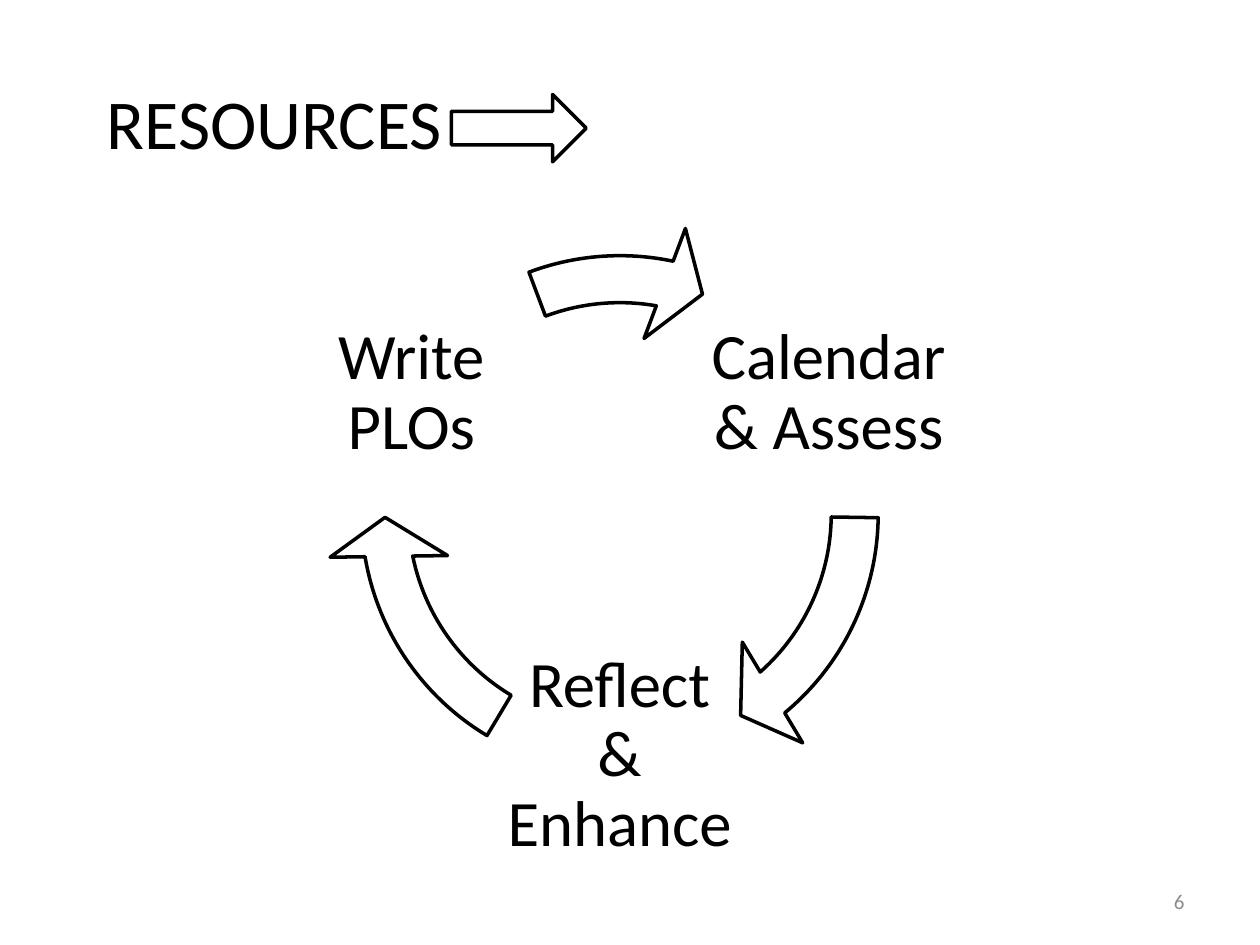
from pptx import Presentation
from pptx.dml.color import RGBColor
from pptx.enum.shapes import MSO_SHAPE
from pptx.enum.text import MSO_ANCHOR, MSO_AUTO_SIZE, PP_ALIGN
from pptx.util import Pt

INK = {"black": "000000", "white": "FFFFFF", "gray": "8C8C8C"}
STEPS = [
    ("Calendar & Assess", 402.5, 154, 29.68, 0.49),
    ("Reflect & Enhance", 283, 361, 101.76, 72.57),
    ("Write PLOs", 164, 154, 168.61, 149.64),
]
SIDE = 142
RING = (186.5, 126, 335.5, 335.5)


def color(name):
    return RGBColor.from_string(INK[name])


def add_text(shapes, text, box, size, ink="black", align=PP_ALIGN.LEFT,
             anchor=MSO_ANCHOR.TOP, inset=None, space=None, grow=False):
    frame = shapes.add_textbox(*map(Pt, box)).text_frame
    frame.word_wrap = True
    frame.vertical_anchor = anchor
    if grow:
        frame.auto_size = MSO_AUTO_SIZE.SHAPE_TO_FIT_TEXT
    if inset is not None:
        frame.margin_left = frame.margin_right = Pt(inset)
        frame.margin_top = frame.margin_bottom = Pt(inset)
    para = frame.paragraphs[0]
    para.alignment = align
    if space:
        para.line_spacing = space
    run = para.add_run()
    run.text = text
    run.font.name = "Calibri"
    run.font.size = Pt(size)
    run.font.color.rgb = color(ink)


def add_arrow(shapes, kind, box, fill=None, adjust=()):
    arrow = shapes.add_shape(kind, *map(Pt, box))
    arrow.shadow.inherit = False
    if fill:
        arrow.fill.solid()
        arrow.fill.fore_color.rgb = color(fill)
    else:
        arrow.fill.background()
    arrow.line.color.rgb = color("black")
    arrow.line.width = Pt(2)
    for index, value in enumerate(adjust):
        arrow.adjustments[index] = value


def add_cycle(shapes):
    for text, left, top, end, start in STEPS:
        add_text(shapes, text, (left, top, SIDE, SIDE), 37,
                 align=PP_ALIGN.CENTER, anchor=MSO_ANCHOR.MIDDLE,
                 inset=3.6, space=0.9)
        add_arrow(shapes, MSO_SHAPE.CIRCULAR_ARROW, RING, "white",
                  (0.08, 5.75, end, start, 0.1))


def add_source(shapes):
    add_text(shapes, "RESOURCES", (54, 42, 282, 55.5), 40, grow=True)
    add_arrow(shapes, MSO_SHAPE.RIGHT_ARROW, (258, 54, 77, 38.5))


def main():
    deck = Presentation()
    deck.slide_width, deck.slide_height = Pt(720), Pt(540)
    shapes = deck.slides.add_slide(deck.slide_layouts[6]).shapes
    add_cycle(shapes.add_group_shape().shapes)
    add_source(shapes.add_group_shape().shapes)
    add_text(shapes, "6", (516, 500.5, 168, 28.75), 12, "gray",
             align=PP_ALIGN.RIGHT, anchor=MSO_ANCHOR.MIDDLE)
    deck.save("out.pptx")


if __name__ == "__main__":
    main()
